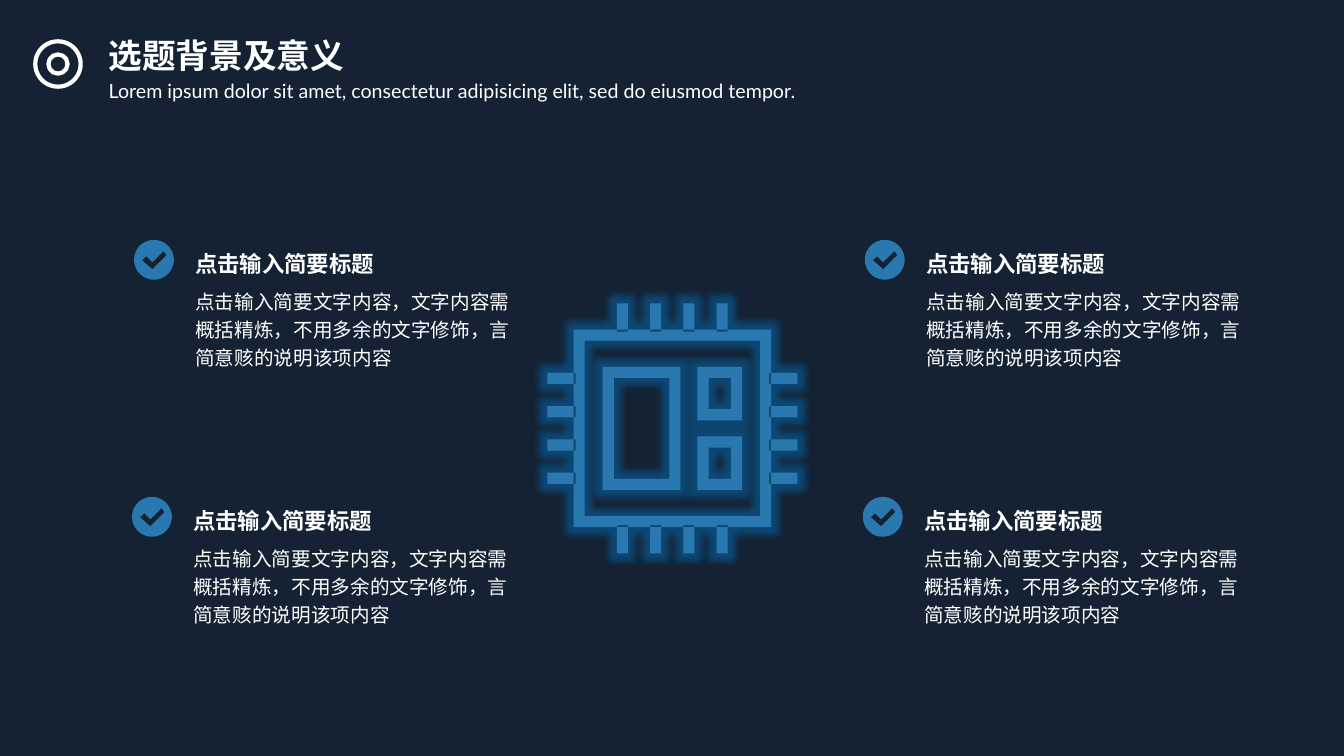
from dataclasses import dataclass
from math import cos, sin, tau

from lxml.etree import SubElement
from pptx import Presentation
from pptx.dml.color import RGBColor as RGB
from pptx.enum.shapes import MSO_SHAPE as SHAPE
from pptx.enum.text import MSO_AUTO_SIZE as AUTO
from pptx.oxml.ns import qn
from pptx.util import Inches, Pt

COLS, ROWS = 160, 90
CELL = Inches(7.5) / ROWS


@dataclass(frozen=True)
class Theme:
    """Colours, font and type sizes of the slide."""
    back: str = "142233"
    accent: str = "2A78B0"
    glow: str = "0080DA"
    text: str = "FFFFFF"
    font: str = "Lato"
    title: int = 24
    heading: int = 16
    body: int = 14
    ring: int = 3


@dataclass(frozen=True)
class Box:
    """A rectangle measured in grid columns and rows."""
    x: float
    y: float
    w: float
    h: float

    def inner(self, dx, dy, w, h):
        """Return a box placed relative to this one."""
        return Box(self.x + dx, self.y + dy, w, h)

    def emu(self):
        """Return left, top, width and height in EMU."""
        return [round(v * CELL) for v in (self.x, self.y, self.w, self.h)]


THEME = Theme()


def add_text(s, box, text, size, bold=False, wrap=True, before=0):
    """Add a one-paragraph text box."""
    tf = s.shapes.add_textbox(*box.emu()).text_frame
    tf.word_wrap = wrap
    tf.auto_size = AUTO.SHAPE_TO_FIT_TEXT
    p = tf.paragraphs[0]
    p.text = text
    p.line_spacing = 1.2
    p.space_before = Pt(before)
    p.font.name = THEME.font
    p.font.size = Pt(size)
    p.font.bold = bold
    p.font.color.rgb = RGB.from_string(THEME.text)


def add_outline(s, box, units, contours):
    """Add one filled freeform whose contours use a square of the given units."""
    left, top, width, _ = box.emu()
    k = width / units
    outlines = [[(left + x * k, top + y * k) for x, y in c] for c in contours]
    builder = s.shapes.build_freeform(*outlines[0][0], scale=1.0)
    for i, points in enumerate(outlines):
        if i:
            builder.move_to(*points[0])
        builder.add_line_segments(points[1:], close=True)
    sp = builder.convert_to_shape()
    sp.shadow.inherit = False
    sp.fill.solid()
    sp.fill.fore_color.rgb = RGB.from_string(THEME.accent)
    sp.line.fill.background()
    return sp


def add_header(s, box, title, subtitle):
    """Draw the target rings, the title and the subtitle."""
    for inset, size in ((0, 5.4), (1.56, 2.28)):
        ring = box.inner(inset, 2.28 + inset, size, size)
        sp = s.shapes.add_shape(SHAPE.OVAL, *ring.emu())
        sp.shadow.inherit = False
        sp.fill.background()
        sp.line.color.rgb = RGB.from_string(THEME.text)
        sp.line.width = Pt(THEME.ring)
    add_text(s, box.inner(7.56, 5.64, 94.2, 4.32), subtitle, THEME.body, before=10)
    add_text(s, box.inner(7.56, 0, 34.8, 7.08), title, THEME.title, bold=True)


def add_topic(s, box, heading, body):
    """Draw a check badge with a heading and a paragraph beside it."""
    disc = [(50 + 50 * cos(tau * i / 72), 50 + 50 * sin(tau * i / 72)) for i in range(72)]
    tick = [(46, 74), (20, 51), (31, 41), (46, 56), (74, 28), (82, 38)]
    add_outline(s, box.inner(0, 0, 4.74, 4.74), 100, [disc, tick])
    add_text(s, box.inner(6.12, 0, 24, 5.04), heading, THEME.heading, bold=True, wrap=False)
    add_text(s, box.inner(6.12, 4.8, box.w - 6.12, 11.4), body, THEME.body)


def rect(x, y, w, h):
    """Return the corners of a rectangle."""
    return [(x, y), (x + w, y), (x + w, y + h), (x, y + h)]


def add_chip(s, box):
    """Draw the glowing processor from frames and four rows of pins."""
    bar, pin, side = 11, 28, 248
    frames = [(26, 26, 196, 196), (55, 63, 77, 122), (149, 63, 44, 53), (149, 132, 44, 53)]
    contours = []
    for x, y, w, h in frames:
        contours += [rect(x, y, w, h), rect(x + bar, y + bar, w - 2 * bar, h - 2 * bar)]
    for i in range(4):
        along = 69 + 33 * i
        for edge in (0, side - pin):
            contours += [rect(along, edge, bar, pin), rect(edge, along, pin, bar)]
    sp = add_outline(s, box, side, contours)
    effects = sp.element.spPr.find(qn("a:effectLst"))
    glow = SubElement(effects, qn("a:glow"), rad=str(Pt(11)))
    color = SubElement(glow, qn("a:srgbClr"), val=THEME.glow)
    SubElement(color, qn("a:alpha"), val="40000")


def main():
    """Build the slide and save it."""
    prs = Presentation()
    prs.slide_width, prs.slide_height = round(COLS * CELL), round(ROWS * CELL)
    s = prs.slides.add_slide(prs.slide_layouts[6])
    s.background.fill.solid()
    s.background.fill.fore_color.rgb = RGB.from_string(THEME.back)
    add_header(s, Box(4.2, 2.64, 101.76, 9.96), "选题背景及意义",
               "Lorem ipsum dolor sit amet, consectetur adipisicing elit, sed do eiusmod tempor.")
    for row in range(2):
        for col in range(2):
            box = Box(15.96 + 87 * col - 0.24 * row, 28.56 + 30.6 * row, 46.92, 16.2)
            add_topic(s, box, "点击输入简要标题",
                      "点击输入简要文字内容，文字内容需概括精炼，不用多余的文字修饰，言简意赅的说明该项内容")
    add_chip(s, Box(65.16, 36.12, 29.76, 29.76))
    prs.save("out.pptx")


if __name__ == "__main__":
    main()
